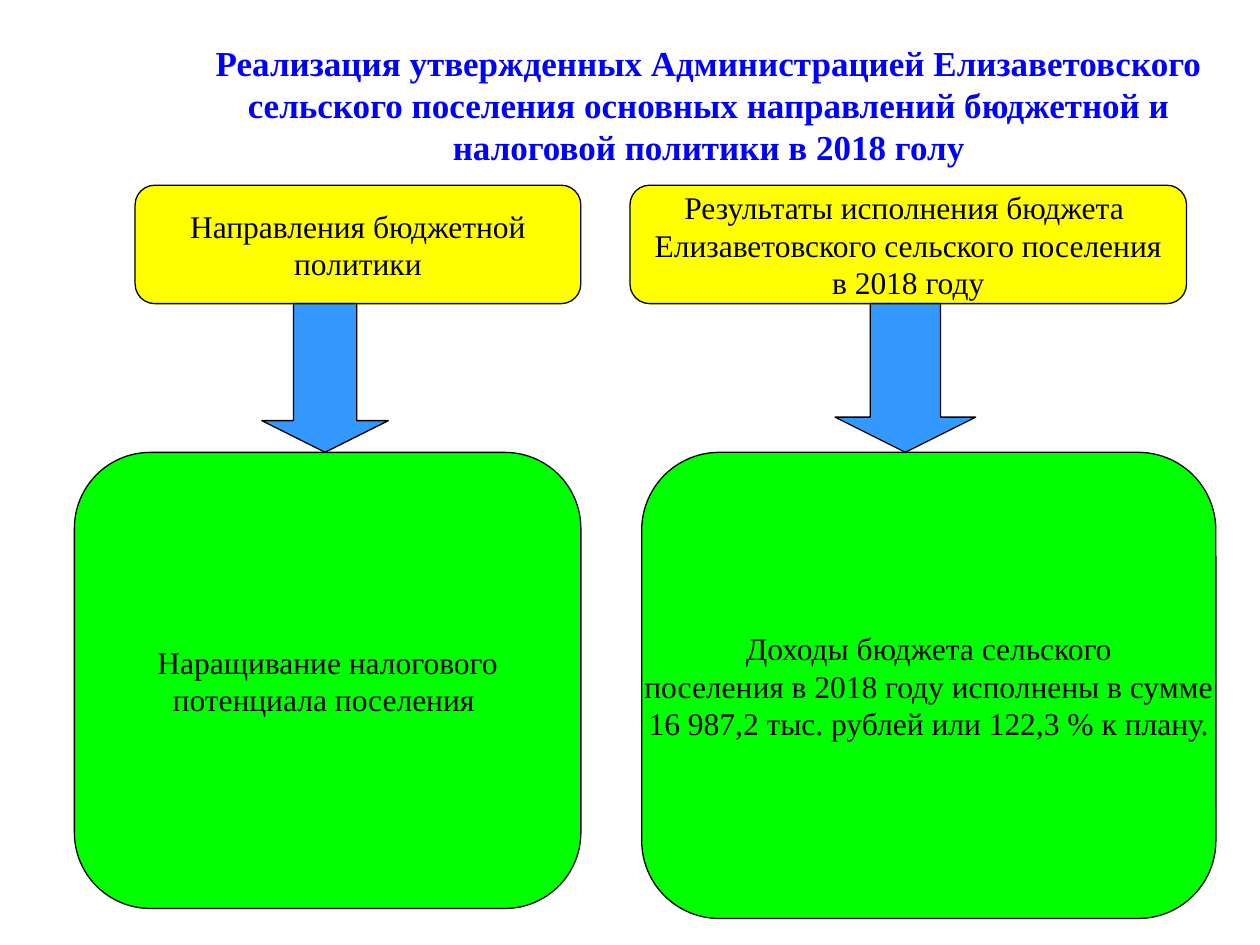
from pptx import Presentation
from pptx.dml.color import RGBColor
from pptx.enum.shapes import MSO_SHAPE
from pptx.enum.text import MSO_ANCHOR, PP_ALIGN
from pptx.util import Inches, Pt

ROUNDED = MSO_SHAPE.FLOWCHART_ALTERNATE_PROCESS
DOWN_ARROW = MSO_SHAPE.DOWN_ARROW
TOP, MIDDLE = MSO_ANCHOR.TOP, MSO_ANCHOR.MIDDLE
CENTER = PP_ALIGN.CENTER

FONT = "Times New Roman"
COLORS = {
    "title": "0000FF",
    "text": "000000",
    "line": "000000",
    "heading": "FFFF00",
    "arrow": "3399FF",
    "body": "00FF00",
}
TITLE = ("Реализация утвержденных Администрацией Елизаветовского сельского "
         "поселения основных направлений бюджетной и налоговой политики в 2018 голу")

# Row heights in inches; the body takes the rest of its column
HEADING_HEIGHT = 0.94
ARROW_HEIGHT = 1.18

# Box in inches; spans are (start, width) as shares of the column width
COLUMNS = [
    {
        "box": (0.59, 1.47, 4.02, 5.74),
        "heading": ["Направления бюджетной", "политики"],
        "body": ["Наращивание налогового", "потенциала поселения "],
        "spans": {"heading": (0.12, 0.88), "arrow": (0.37, 0.25), "body": (0, 1)},
    },
    {
        "box": (5, 1.47, 4.65, 5.82),
        "heading": ["Результаты исполнения бюджета ",
                    "Елизаветовского сельского поселения", "в 2018 году"],
        "body": ["Доходы бюджета сельского",
                 "поселения в 2018 году исполнены в сумме",
                 "16 987,2 тыс. рублей или 122,3 % к плану."],
        "spans": {"heading": (0, 0.95), "arrow": (0.35, 0.24), "body": (0.02, 0.98)},
    },
]


def color(name):
    return RGBColor.from_string(COLORS[name])


def write(shape, lines, size=18, ink="text", bold=False, anchor=MIDDLE, wrap=False):
    frame = shape.text_frame
    frame.word_wrap = wrap
    frame.vertical_anchor = anchor
    for index, line in enumerate(lines):
        para = frame.add_paragraph() if index else frame.paragraphs[0]
        para.alignment = CENTER
        span = para.add_run()
        span.text = line
        span.font.name = FONT
        span.font.size = Pt(size)
        span.font.bold = bold
        span.font.color.rgb = color(ink)


def add_block(page, kind, box, fill):
    shape = page.shapes.add_shape(kind, *map(Inches, box))
    shape.shadow.inherit = False
    shape.fill.solid()
    shape.fill.fore_color.rgb = color(fill)
    shape.line.color.rgb = color("line")
    shape.line.width = Pt(0.75)
    return shape


def add_title(page, box):
    title = page.shapes.title
    title.left, title.top, title.width, title.height = map(Inches, box)
    write(title, [TITLE], size=20, ink="title", bold=True, anchor=TOP, wrap=True)


def add_column(page, box, heading, body, spans):
    left, top, width, height = box
    body_height = height - HEADING_HEIGHT - ARROW_HEIGHT
    rows = [
        ("heading", ROUNDED, HEADING_HEIGHT, heading),
        ("arrow", DOWN_ARROW, ARROW_HEIGHT, None),
        ("body", ROUNDED, body_height, body),
    ]
    for name, kind, row_height, lines in rows:
        start, share = spans[name]
        part = (left + start * width, top, share * width, row_height)
        shape = add_block(page, kind, part, name)
        if lines:
            write(shape, lines)
        else:
            # Arrowhead depth relative to the arrow width
            shape.adjustments[1] = 0.25
        top += row_height


def main():
    deck = Presentation()
    deck.slide_width, deck.slide_height = Inches(10), Inches(7.5)
    page = deck.slides.add_slide(deck.slide_layouts[5])

    # Title across the top
    add_title(page, (1.61, 0.28, 8.03, 1.11))

    # Policy direction on the left, result on the right
    for column in COLUMNS:
        add_column(page, **column)

    deck.save("out.pptx")


if __name__ == "__main__":
    main()
